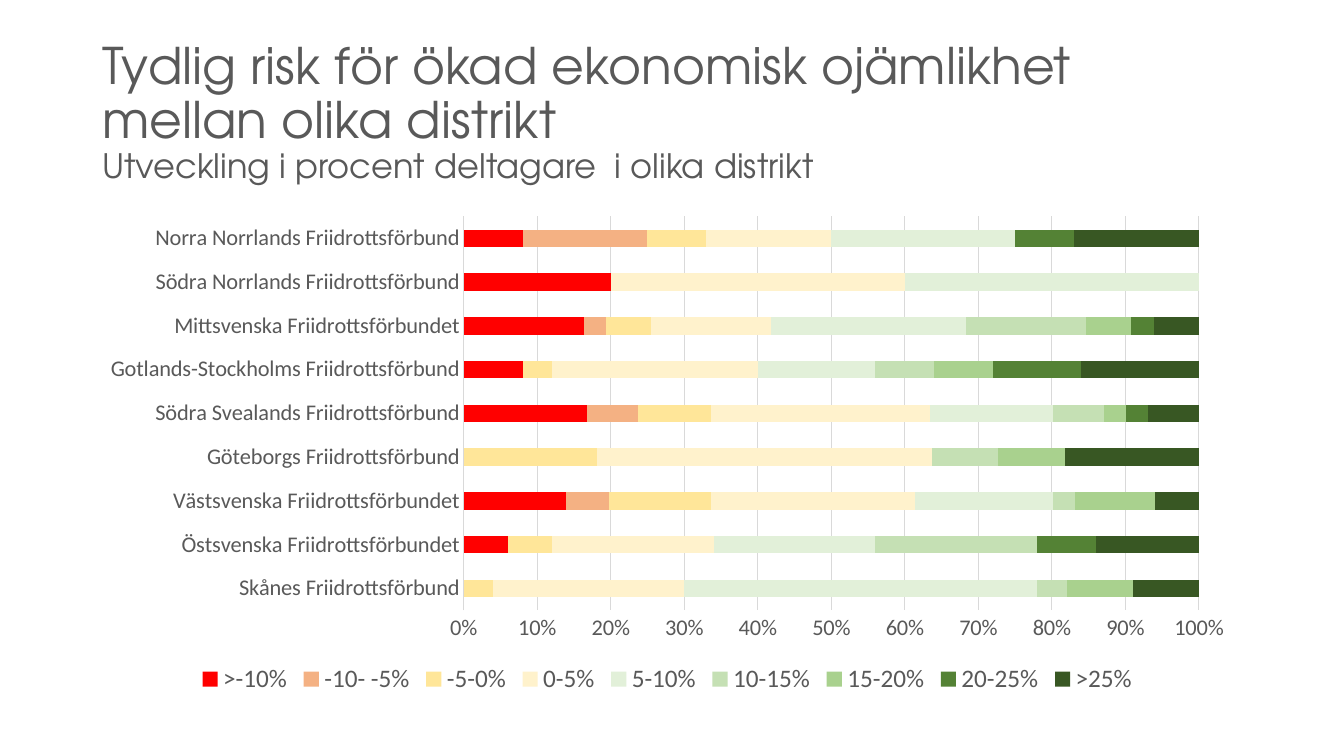
"""Build a slide with a stacked bar chart of participation change per athletics district."""
from pptx import Presentation
from pptx import util as u
from pptx.chart.data import CategoryChartData
from pptx.dml.color import RGBColor
from pptx.enum import chart as charts, text

COLOURS = {
    "text": "595959",
    "line": "D9D9D9",
    ">-10%": "FF0000",
    "-10- -5%": "F4B183",
    "-5-0%": "FFE699",
    "0-5%": "FFF2CC",
    "5-10%": "E2F0D9",
    "10-15%": "C5E0B4",
    "15-20%": "A9D18E",
    "20-25%": "548235",
    ">25%": "385723",
}
DISTRICTS = {
    "Skånes Friidrottsförbund": (None, None, 4, 26, 48, 4, 9, None, 9),
    "Östsvenska Friidrottsförbundet": (6, None, 6, 22, 22, 22, None, 8, 14),
    "Västsvenska Friidrottsförbundet": (14, 6, 14, 28, 19, 3, 11, None, 6),
    "Göteborgs Friidrottsförbund": (None, None, 18, 45, None, 9, 9, None, 18),
    "Södra Svealands Friidrottsförbund": (17, 7, 10, 30, 17, 7, 3, 3, 7),
    "Gotlands-Stockholms Friidrottsförbund": (8, None, 4, 28, 16, 8, 8, 12, 16),
    "Mittsvenska Friidrottsförbundet": (16, 3, 6, 16, 26, 16, 6, 3, 6),
    "Södra Norrlands Friidrottsförbund": (20, None, None, 40, 40, None, None, None, None),
    "Norra Norrlands Friidrottsförbund": (8, 17, 8, 17, 25, None, None, 8, 17),
}
BANDS = [name for name in COLOURS if name.endswith("%")]


def colour(name):
    return RGBColor.from_string(COLOURS[name])


def style_font(font, name, size):
    font.name = name
    font.size = u.Pt(size)
    font.color.rgb = colour("text")


presentation = Presentation()
presentation.slide_width = u.Pt(960)
presentation.slide_height = u.Pt(540)
slide = presentation.slides.add_slide(presentation.slide_layouts[6])

chart_data = CategoryChartData()
chart_data.categories = list(DISTRICTS)
for band, values in zip(BANDS, zip(*DISTRICTS.values())):
    chart_data.add_series(band, values)
chart = slide.shapes.add_chart(
    charts.XL_CHART_TYPE.BAR_STACKED_100,
    u.Pt(62.6), u.Pt(147.6), u.Pt(828), u.Pt(352), chart_data,
).chart
chart.has_title = False
style_font(chart.font, "Calibri", 16)

plot = chart.plots[0]
plot.gap_width = 150
plot.overlap = 100
plot.vary_by_categories = False
for series in plot.series:
    series.format.fill.solid()
    series.format.fill.fore_color.rgb = colour(series.name)
    series.invert_if_negative = False

for axis in (chart.category_axis, chart.value_axis):
    axis.major_tick_mark = charts.XL_TICK_MARK.NONE
    axis.minor_tick_mark = charts.XL_TICK_MARK.NONE
    style_font(axis.tick_labels.font, "Calibri", 16)
chart.category_axis.has_major_gridlines = False
chart.value_axis.has_major_gridlines = True
chart.value_axis.format.line.fill.background()
chart.value_axis.tick_labels.number_format = "0%"
chart.value_axis.tick_labels.number_format_is_linked = False
for line in (chart.category_axis.format.line, chart.value_axis.major_gridlines.format.line):
    line.color.rgb = colour("line")
    line.width = u.Pt(0.75)

chart.has_legend = True
chart.legend.position = charts.XL_LEGEND_POSITION.BOTTOM
chart.legend.include_in_layout = False
style_font(chart.legend.font, "Calibri", 18)

title = slide.shapes.add_textbox(u.Pt(66), u.Pt(28.8), u.Pt(828), u.Pt(104.4))
title.text_frame.word_wrap = True
title.text_frame.vertical_anchor = text.MSO_ANCHOR.MIDDLE
paragraph = title.text_frame.paragraphs[0]
paragraph.line_spacing = 0.9
heading = paragraph.add_run()
heading.text = "Tydlig risk för ökad ekonomisk ojämlikhet mellan olika distrikt"
style_font(heading.font, "TeX Gyre Adventor", 36)
paragraph.add_line_break()
subheading = paragraph.add_run()
subheading.text = "Utveckling i procent deltagare  i olika distrikt"
style_font(subheading.font, "TeX Gyre Adventor", 24)

presentation.save("out.pptx")
